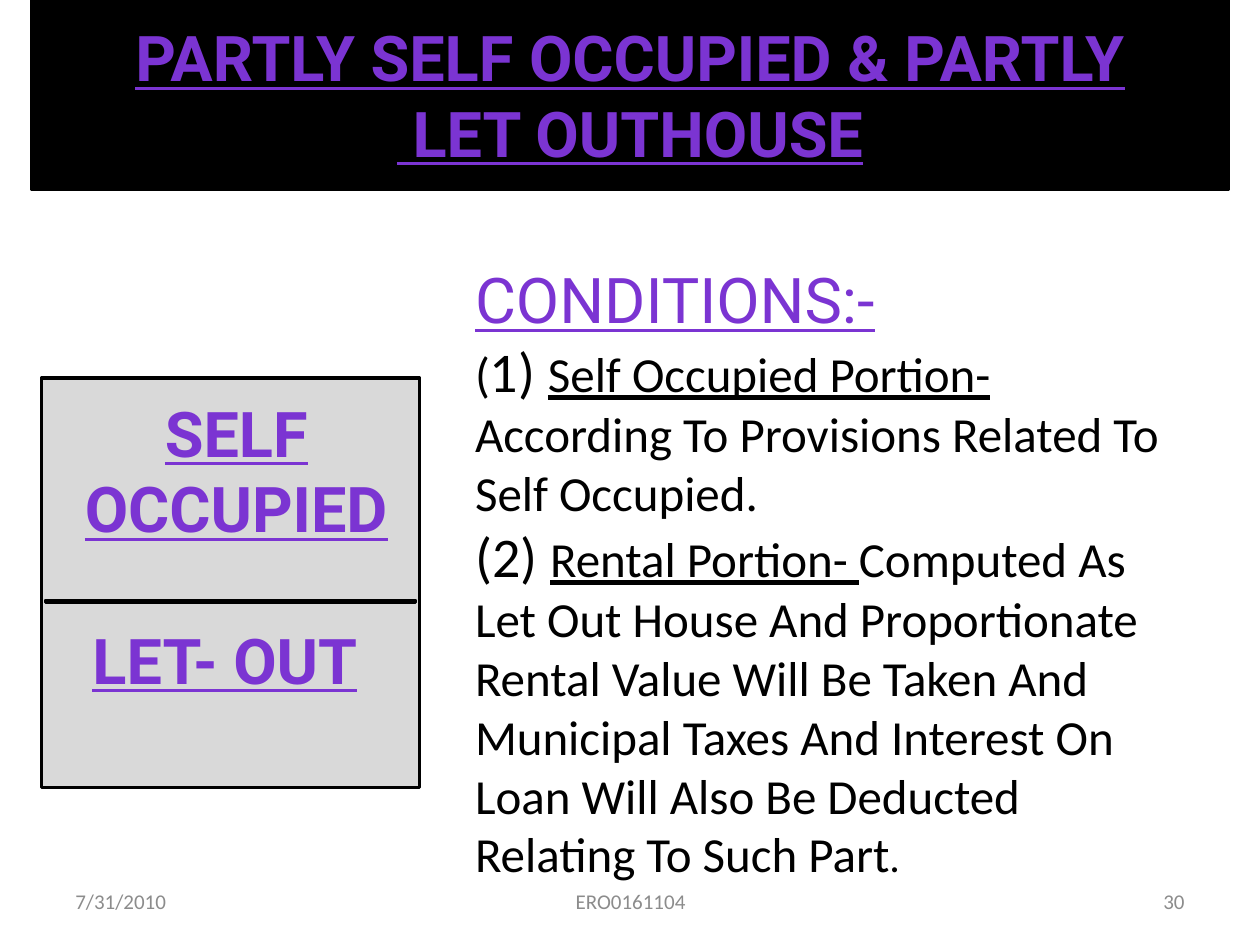
"""Build the slide on a house that is partly self occupied and partly let out."""
from lxml.etree import SubElement
from pptx import Presentation
from pptx.dml.color import RGBColor
from pptx.enum.shapes import MSO_SHAPE
from pptx.enum.text import MSO_ANCHOR, MSO_AUTO_SIZE, PP_ALIGN
from pptx.oxml.ns import qn
from pptx.util import Inches, Pt

BLACK = RGBColor(0x00, 0x00, 0x00)
PURPLE = RGBColor(0x7B, 0x34, 0xD2)
PANEL = RGBColor(0xD9, 0xD9, 0xD9)
GREY = RGBColor(0x8C, 0x8C, 0x8C)
HEAD = {"size": 36, "face": "Roboto", "color": PURPLE, "under": True}
BOLD = {**HEAD, "bold": True}


def add_run(para, text, size=28, face="Calibri", color=BLACK, bold=False, under=False):
    """Add one run of formatted text to a paragraph."""
    run = para.add_run()
    run.text = text
    font = run.font
    font.size, font.name = Pt(size), face
    font.bold, font.underline = bold, under
    font.color.rgb = color


def fill_text(shape, paras, align=PP_ALIGN.LEFT, anchor=MSO_ANCHOR.TOP):
    """Write paragraphs, each a list of (text, format) runs, into a shape."""
    frame = shape.text_frame
    frame.word_wrap = True
    frame.auto_size = MSO_AUTO_SIZE.NONE
    frame.vertical_anchor = anchor
    for i, runs in enumerate(paras):
        para = frame.add_paragraph() if i else frame.paragraphs[0]
        props = para._p.get_or_add_pPr()
        props.set("marL", "0")
        props.set("indent", "0")
        SubElement(props, qn("a:buNone"))
        para.alignment = align
        para.space_before = Pt(0)
        for text, style in runs:
            add_run(para, text, **style)


def place(shape, left, top, width, height):
    """Move and size a placeholder."""
    shape.left, shape.top = Inches(left), Inches(top)
    shape.width, shape.height = Inches(width), Inches(height)


def paint(shape, color):
    """Give a shape a solid fill and a black outline."""
    shape.fill.solid()
    shape.fill.fore_color.rgb = color
    shape.line.color.rgb = BLACK
    shape.line.width = Pt(2)


def add_block(slide, kind, box, color):
    """Add a painted preset shape."""
    shape = slide.shapes.add_shape(kind, *map(Inches, box))
    shape.shadow.inherit = False
    paint(shape, color)


def add_label(slide, box, text, style, **layout):
    """Add a text box that holds one run."""
    shape = slide.shapes.add_textbox(*map(Inches, box))
    fill_text(shape, [[(text, style)]], **layout)


def add_title(slide):
    """Shape the title as a black scroll and write it."""
    title = slide.shapes.title
    place(title, 0.25, 0, 9.5, 1.5)
    geom = SubElement(title._element.spPr, qn("a:prstGeom"), prst="horizontalScroll")
    SubElement(geom, qn("a:avLst"))
    paint(title, BLACK)
    lines = ["PARTLY SELF OCCUPIED & PARTLY", " LET OUTHOUSE"]
    fill_text(title, [[(line, BOLD)] for line in lines],
              align=PP_ALIGN.CENTER, anchor=MSO_ANCHOR.MIDDLE)


def add_body(slide):
    """Write the conditions into the body placeholder."""
    body = slide.placeholders[1]
    place(body, 3.67, 2.02, 5.83, 5.08)
    big, under = {"size": 32}, {"under": True}
    fill_text(body, [
        [("CONDITIONS:-", HEAD)],
        [("(", {}), ("1) ", big), ("Self Occupied Portion-", under),
         (" According To Provisions Related To Self Occupied.", {})],
        [("(2) ", big), ("Rental Portion- ", under),
         ("Computed As Let Out House And Proportionate Rental Value Will Be Taken "
          "And Municipal Taxes And Interest On Loan Will Also Be Deducted "
          "Relating To Such Part", {}), (".", {"size": 24})],
    ])


def add_house(slide):
    """Draw the house as two labelled storeys."""
    add_block(slide, MSO_SHAPE.RECTANGLE, (0.33, 3, 3, 3.25), PANEL)
    add_block(slide, MSO_SHAPE.MATH_MINUS, (-0.17, 4.75, 4, 0.05), BLACK)
    add_label(slide, (0, 3.08, 3.75, 1.31), "SELF OCCUPIED", BOLD, align=PP_ALIGN.CENTER)
    add_label(slide, (0.12, 4.88, 3.33, 0.72), "LET- OUT", BOLD, align=PP_ALIGN.CENTER)


def add_foot(slide):
    """Add the date, the code and the page number."""
    for left, width, text, align in (
        (0.5, 2.33, "7/31/2010", PP_ALIGN.LEFT),
        (3.42, 3.17, "ERO0161104", PP_ALIGN.CENTER),
        (7.17, 2.33, "30", PP_ALIGN.RIGHT),
    ):
        add_label(slide, (left, 6.95, width, 0.4), text, {"size": 12, "color": GREY},
                  align=align, anchor=MSO_ANCHOR.MIDDLE)


def main():
    """Build and save the slide."""
    deck = Presentation()
    deck.slide_width, deck.slide_height = Inches(10), Inches(7.5)
    slide = deck.slides.add_slide(deck.slide_layouts[1])
    add_title(slide)
    add_house(slide)
    add_body(slide)
    add_foot(slide)
    deck.save("out.pptx")


if __name__ == "__main__":
    main()
